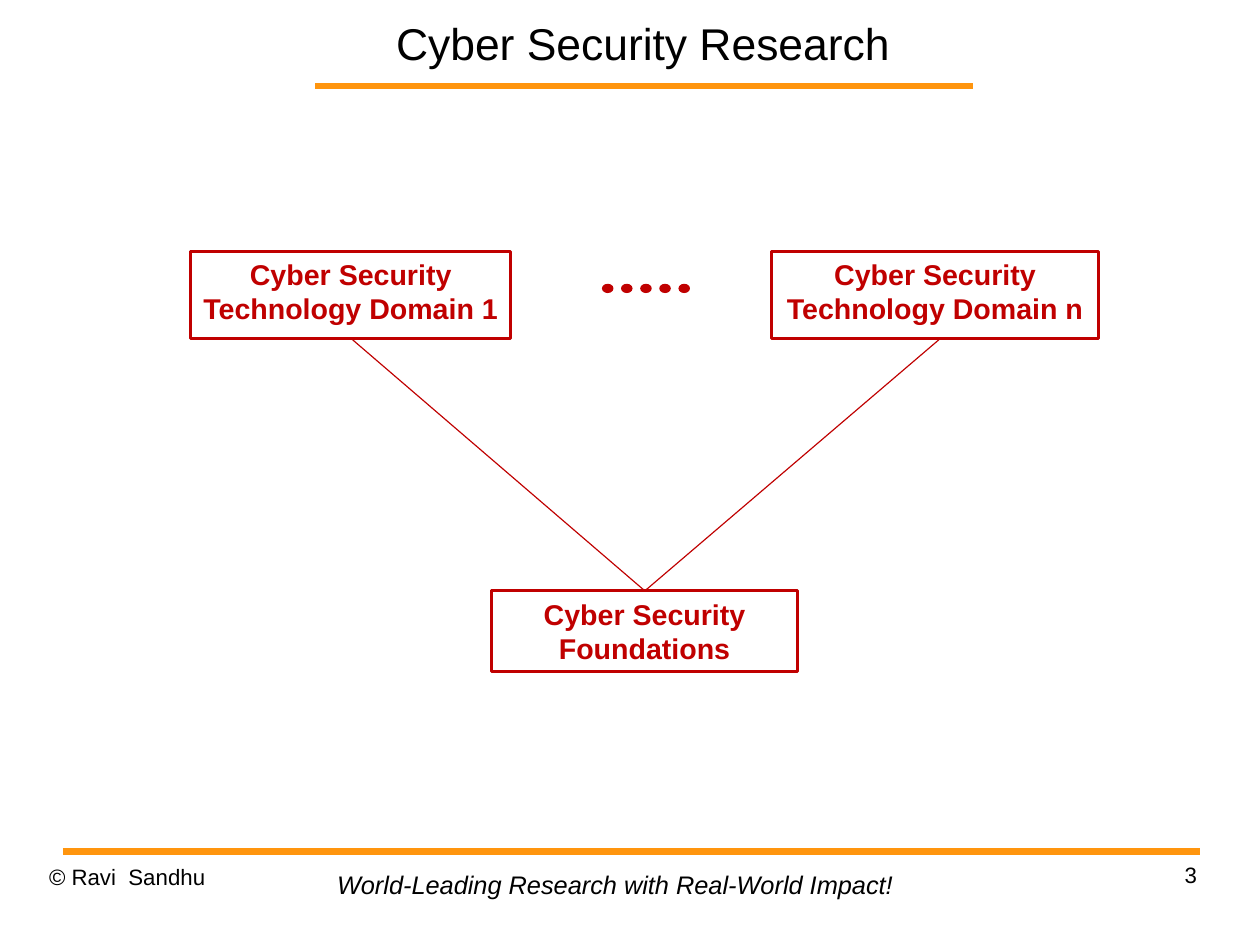
from pptx import Presentation
from pptx.dml.color import RGBColor
from pptx.enum.shapes import MSO_CONNECTOR, MSO_SHAPE
from pptx.enum.text import MSO_ANCHOR as Anchor, PP_ALIGN as Align
from pptx.oxml.ns import qn
from pptx.util import Cm, Pt
from lxml import etree

BLACK = RGBColor(0x00, 0x00, 0x00)
RED = RGBColor(0xC0, 0x00, 0x00)
ORANGE = RGBColor(0xFF, 0x95, 0x0E)


def add_line(page, start, end, color, width):
    line = page.shapes.add_connector(
        MSO_CONNECTOR.STRAIGHT, *(Cm(value) for value in start + end))
    line.line.color.rgb = color
    line.line.width = Pt(width)
    etree.SubElement(line._element.spPr, qn("a:effectLst"))


def write(box, lines, frame_format, para_format, font_format):
    frame = box.text_frame
    for name, value in frame_format.items():
        setattr(frame, name, value)
    for index, text in enumerate(lines):
        para = frame.add_paragraph() if index else frame.paragraphs[0]
        for name, value in para_format.items():
            setattr(para, name, value)
        span = para.add_run()
        span.text = text
        span.font.name = "Arial"
        for name, value in font_format.items():
            setattr(span.font, name, value)
        span.font.color.rgb = RED if font_format.get("bold") else BLACK


deck = Presentation()
deck.slide_width, deck.slide_height = Cm(28), Cm(21)
page = deck.slides.add_slide(deck.slide_layouts[6])

# Orange rules under the title and above the footer
add_line(page, (7.01, 1.91), (21.62, 1.91), ORANGE, 4.31)
add_line(page, (1.4, 18.92), (26.67, 18.92), ORANGE, 4.31)

# Title and footer texts
no_margins = {"margin_left": 0, "margin_top": 0, "margin_right": 0,
              "margin_bottom": 0, "word_wrap": True}
texts = [
    ("3", (20.07, 19.13, 6.53, 1.45), no_margins,
     {"alignment": Align.RIGHT, "line_spacing": 1.01}, {"size": Pt(14)}),
    ("© Ravi  Sandhu", (1.09, 19.18, 6.53, 1.45), no_margins,
     {"alignment": Align.LEFT, "line_spacing": 1.01}, {"size": Pt(14)}),
    ("World-Leading Research with Real-World Impact!",
     (7.24, 19.18, 12.9, 0.94), {"word_wrap": False},
     {"alignment": Align.LEFT}, {"size": Pt(16), "italic": True}),
    ("Cyber Security Research", (6.12, 0, 16.33, 1.91),
     {**no_margins, "vertical_anchor": Anchor.MIDDLE},
     {"alignment": Align.CENTER}, {"size": Pt(28)}),
]
for text, place, frame_format, para_format, font_format in texts:
    box = page.shapes.add_textbox(*(Cm(value) for value in place))
    write(box, [text], frame_format, para_format, font_format)

# Foundations and technology domains
domains = [
    ("Foundations", (10.92, 13.13, 6.81, 1.8)),
    ("Technology Domain 1", (4.24, 5.59, 7.11, 1.93)),
    ("Technology Domain n", (17.15, 5.59, 7.26, 1.93)),
]
for name, place in domains:
    box = page.shapes.add_shape(
        MSO_SHAPE.RECTANGLE, *(Cm(value) for value in place))
    box.shadow.inherit = False
    box.fill.background()
    box.line.color.rgb = RED
    box.line.width = Pt(1.75)
    write(box, ["Cyber Security", name],
          {"word_wrap": False, "vertical_anchor": Anchor.TOP},
          {"alignment": Align.CENTER}, {"size": Pt(18), "bold": True})

# Links from the domains to the foundations
for domain_x in (7.8, 20.9):
    add_line(page, (domain_x, 7.52), (14.33, 13.13), RED, 0.75)

# Dots between the first and the last domain
for index in range(5):
    dot = page.shapes.add_shape(
        MSO_SHAPE.OVAL, Cm(13.39 + 0.425 * index), Cm(6.32), Cm(0.23), Cm(0.18))
    dot.shadow.inherit = False
    dot.fill.solid()
    dot.fill.fore_color.rgb = RED
    dot.line.color.rgb = RED
    dot.line.width = Pt(0.75)

deck.save("out.pptx")
